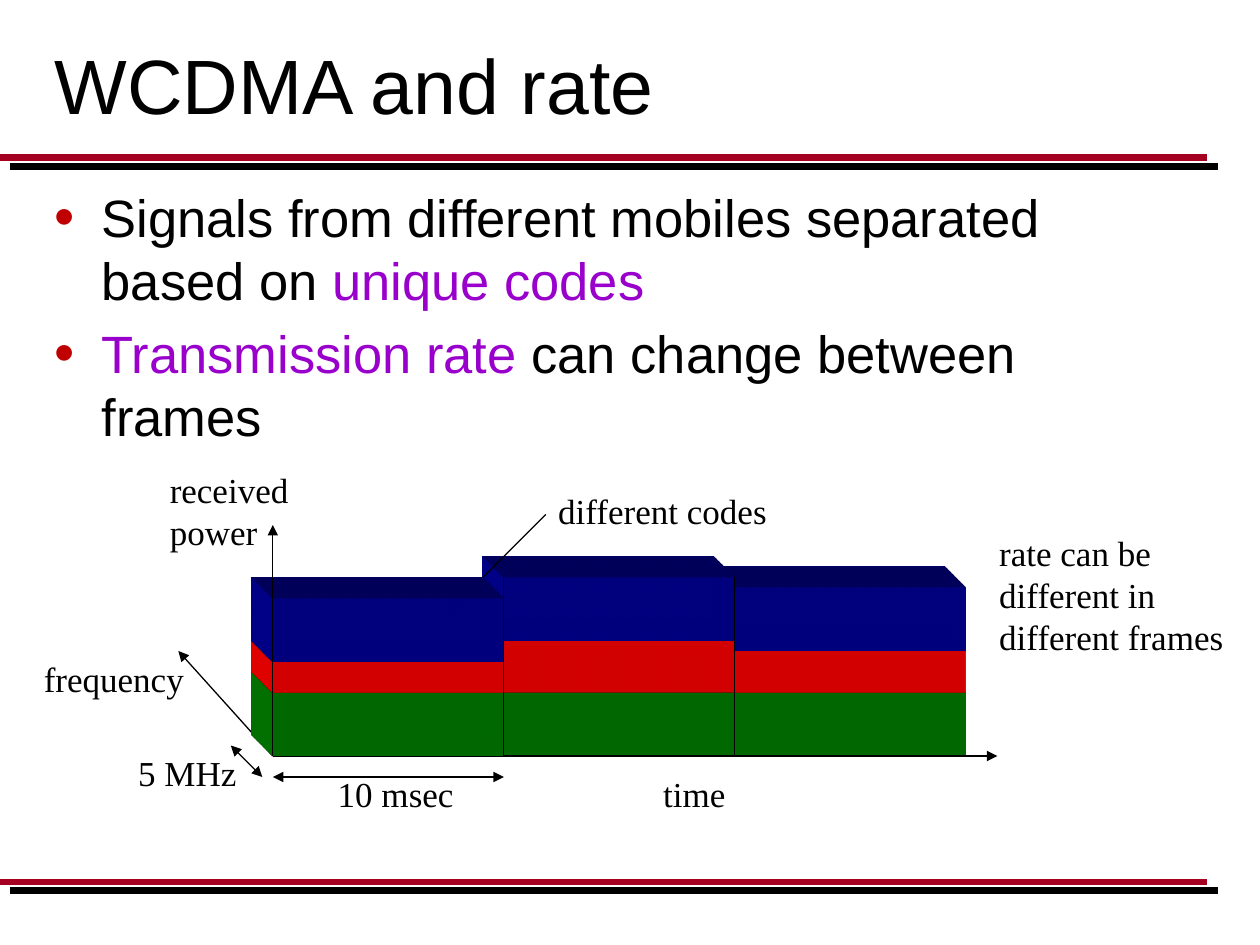
from lxml.etree import SubElement as Sub
from pptx import Presentation
from pptx.dml.color import RGBColor
from pptx.enum.shapes import MSO_CONNECTOR as Link, MSO_SHAPE as Form
from pptx.enum.text import MSO_ANCHOR as Anchor, MSO_AUTO_SIZE as Fit
from pptx.oxml import parse_xml
from pptx.oxml.ns import nsdecls, qn
from pptx.util import Cm, Pt

BLACK = RGBColor(0x00, 0x00, 0x00)
BLUE = RGBColor(0x00, 0x00, 0xFF)
WINE = RGBColor(0xA5, 0x00, 0x21)
VIOLET = RGBColor(0x99, 0x00, 0xCC)
GREEN = RGBColor(0x00, 0x80, 0x00)
RED = RGBColor(0xFF, 0x00, 0x00)
NAVY = RGBColor(0x00, 0x00, 0x99)

UNIT = 2.54 / 12  # diagram grid step, in cm
FRAME = 22        # frame width, in grid steps


def add_line(slide, start, end, color, width, head=False, tail=False):
    """Draw a line between two points in cm; head is the arrow at the start."""
    (x1, y1), (x2, y2) = start, end
    line = slide.shapes.add_connector(Link.STRAIGHT, Cm(x1), Cm(y1), Cm(x2), Cm(y2))
    line.line.color.rgb = color
    line.line.width = Pt(width)
    stroke = line.line._get_or_add_ln()
    for tag, shown in (("a:headEnd", head), ("a:tailEnd", tail)):
        if shown:
            Sub(stroke, qn(tag), type="triangle")
    return Sub(line._element.spPr, qn("a:effectLst"))


def add_rule(slide, left, top, width):
    """Draw a wine rule with a hard black shadow below it."""
    ends = (left, top), (left + width, top)
    effect = add_line(slide, *ends, BLUE, 4)
    shade = Sub(effect, qn("a:outerShdw"), dist=str(Pt(7.8)), dir="2400000",
                algn="ctr", rotWithShape="0")
    Sub(shade, qn("a:srgbClr"), val=str(BLACK))
    add_line(slide, *ends, WINE, 4)


def add_run(para, text, font, size, color=BLACK):
    run = para.add_run()
    run.text = text
    run.font.name = font
    run.font.size = Pt(size)
    run.font.color.rgb = color


def add_box(slide, left, top, width, height, wrap=True):
    frame = slide.shapes.add_textbox(Cm(left), Cm(top), Cm(width), Cm(height)).text_frame
    frame.word_wrap = wrap
    return frame


def add_title(slide, left, top, width, height):
    frame = add_box(slide, left, top, width, height)
    frame.vertical_anchor = Anchor.MIDDLE
    add_run(frame.paragraphs[0], "WCDMA and rate", "Arial", 44)


def add_bullet(para):
    props = para._p.get_or_add_pPr()
    props.set("marL", str(Cm(0.95)))
    props.set("indent", str(-Cm(0.95)))
    Sub(Sub(props, qn("a:buClr")), qn("a:srgbClr"), val="C00000")
    Sub(props, qn("a:buSzPct"), val="110000")
    Sub(props, qn("a:buFont"), typeface="Arial")
    Sub(props, qn("a:buChar"), char="•")


def add_body(slide, left, top, width, height):
    points = (
        (("Signals from different mobiles separated based on ", BLACK),
         ("unique codes", VIOLET)),
        (("Transmission rate", VIOLET), (" can change between frames", BLACK)),
    )
    frame = add_box(slide, left, top, width, height)
    for i, runs in enumerate(points):
        para = frame.add_paragraph() if i else frame.paragraphs[0]
        para.space_before = Pt(6)
        add_bullet(para)
        for text, color in runs:
            add_run(para, text, "Arial", 30, color)


def extrude(shape, color):
    """Give a flat block depth towards the upper left."""
    props = shape._element.spPr
    props.append(parse_xml(
        f'<a:scene3d {nsdecls("a")}><a:camera prst="legacyObliqueTopLeft"/>'
        '<a:lightRig rig="legacyFlat3" dir="b"/></a:scene3d>'))
    props.append(parse_xml(
        f'<a:sp3d {nsdecls("a")} extrusionH="430200" prstMaterial="legacyMatte">'
        '<a:bevelT w="13500" h="13500" prst="angle"/>'
        '<a:bevelB w="13500" h="13500" prst="angle"/>'
        f'<a:extrusionClr><a:srgbClr val="{color}"/></a:extrusionClr></a:sp3d>'))


def add_chart(slide, left, base):
    """Draw the power diagram; its axes meet at (left, base)."""
    def place(x, y):
        return left + x * UNIT, base + y * UNIT

    def line(x1, y1, x2, y2, **ends):
        add_line(slide, place(x1, y1), place(x2, y2), BLACK, 0.75, **ends)

    def label(text, x, y, width, lines=1, wrap=False):
        size = width * UNIT, 0.25 + lines * 0.85
        frame = add_box(slide, *place(x, y), *size, wrap)
        frame.auto_size = Fit.SHAPE_TO_FIT_TEXT
        for i, part in enumerate(text.split("\n")):
            para = frame.add_paragraph() if i else frame.paragraphs[0]
            add_run(para, part, "Times New Roman", 20)

    def stack(index, *rates):
        """Pile up one frame's blocks from the time axis."""
        y = 0
        for rate, color in zip(rates, (GREEN, RED, NAVY)):
            y -= rate
            spot = [Cm(v) for v in place(index * FRAME, y)]
            block = slide.shapes.add_shape(
                Form.RECTANGLE, *spot, Cm(FRAME * UNIT), Cm(rate * UNIT))
            block.shadow.inherit = False
            block.fill.solid()
            block.fill.fore_color.rgb = color
            block.line.fill.background()
            extrude(block, color)

    stack(2, 6, 4, 6)
    stack(1, 6, 5, 6)
    label("time", 36, 1, 8.5)
    line(0, 2, FRAME, 2, head=True, tail=True)
    label("10 msec", 5, 1, 14)
    line(0, 0, 69, 0, tail=True)
    for index in (2, 1):
        line(index * FRAME, -17, index * FRAME, 0)
    label("rate can be different in different frames", 68, -22, 26, 3, True)
    label("received\npower", -11, -28, 14, 2)
    line(0, 0, -9, -10, tail=True)
    label("frequency", -23, -10, 16.5)
    line(-4, -1, -1, 2, head=True, tail=True)
    label("5 MHz", -14, -1, 12)
    line(17, -14, 26, -23)
    label("different codes", 26, -26, 23)
    stack(0, 6, 3, 6)
    line(0, -22, 0, 0, head=True)
    line(FRAME, 0, FRAME, -15)


def main():
    deck = Presentation()
    deck.slide_width, deck.slide_height = Cm(25.4), Cm(19.05)
    slide = deck.slides.add_slide(deck.slide_layouts[6])
    for top in (3.18, 17.78):
        add_rule(slide, 0, top, 24.34)
    add_title(slide, 0.85, 0, 23.28, 3.39)
    add_body(slide, 0.85, 3.6, 23.28, 13.97)
    add_chart(slide, 5.5, 15.24)
    deck.save("out.pptx")


if __name__ == "__main__":
    main()
